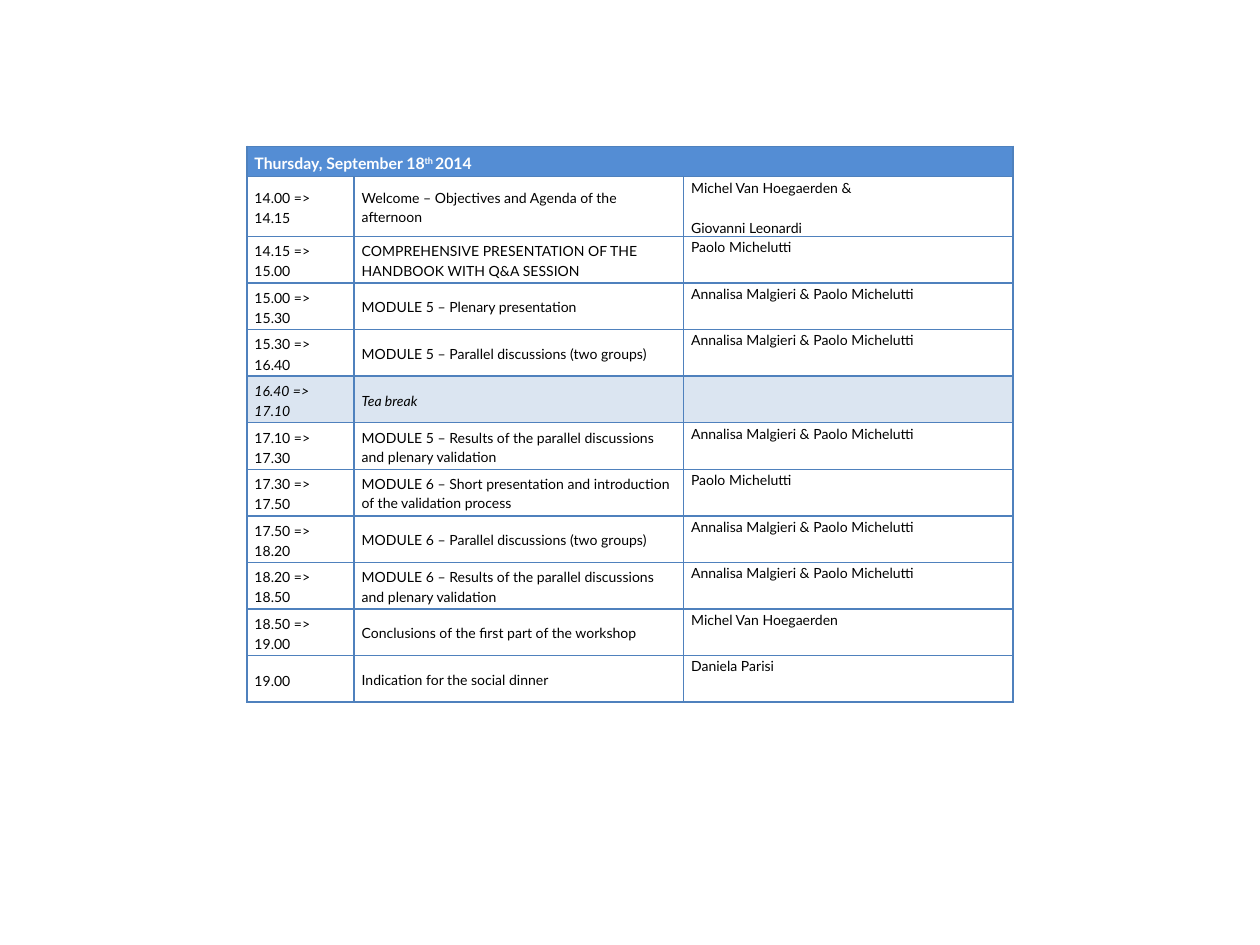
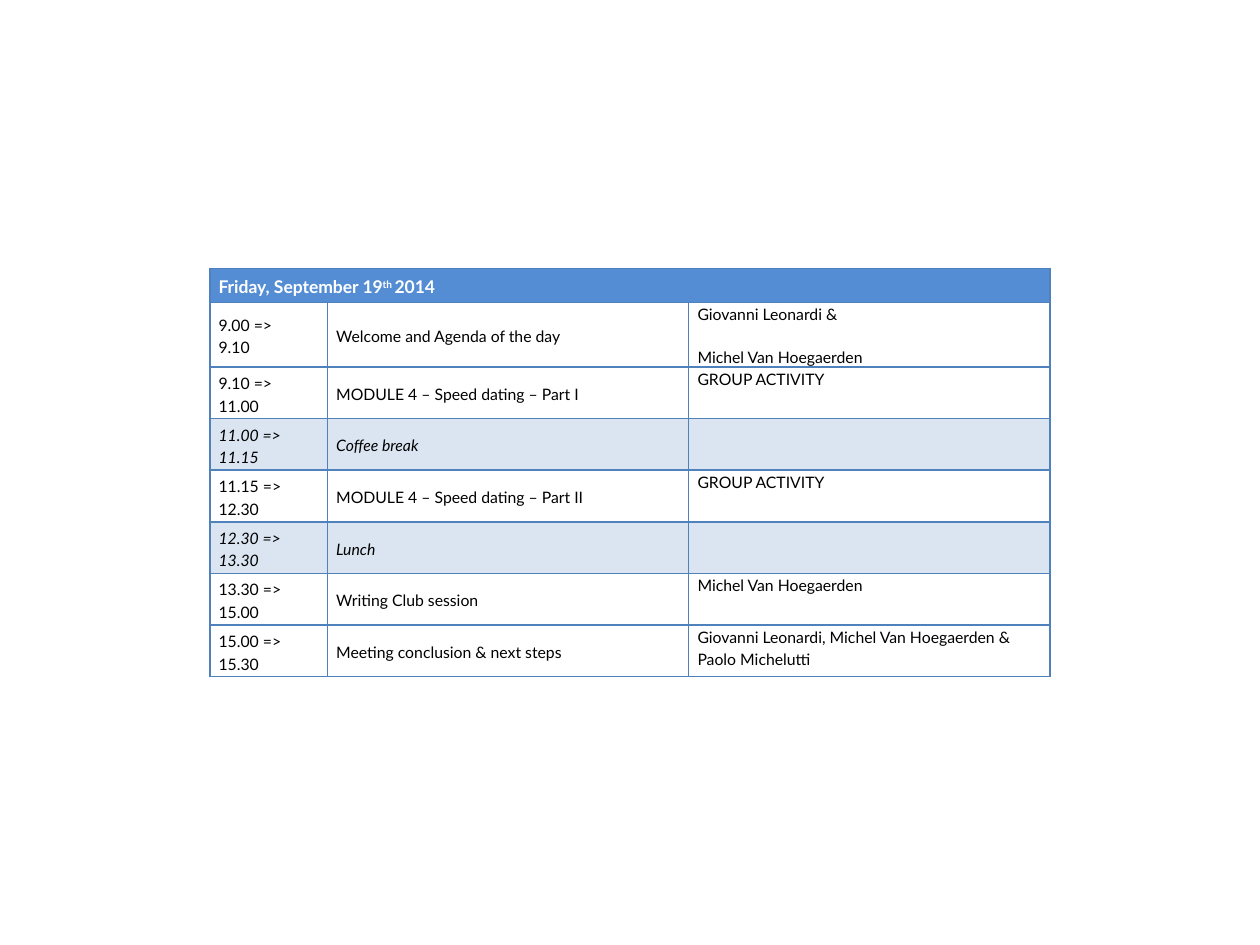
"""Build a two-day workshop agenda, one table per slide."""
from lxml import etree
from pptx import Presentation, util as u
from pptx.dml.color import RGBColor
from pptx.enum import text
from pptx.oxml.ns import qn

WIDE, HIGH = u.Inches(10), u.Inches(7.5)
FONT = "Lato"
COLS = (0.11, 0.03, 0.43, 0.43)
INK = {"head": "548DD4", "rest": "DBE5F1", "line": "4F81BD",
       "dark": "000000", "light": "FFFFFF"}
PAIR = "Annalisa Malgieri & Paolo Michelutti"
MICHEL, PAOLO = "Michel Van Hoegaerden", "Paolo Michelutti"

THURSDAY = [
    ("14.00 => 14.15", "Welcome – Objectives and Agenda of the afternoon",
     [MICHEL + " &", "Giovanni Leonardi"]),
    ("14.15 => 15.00", "COMPREHENSIVE PRESENTATION OF THE HANDBOOK WITH Q&A SESSION", [PAOLO]),
    ("15.00 => 15.30", "MODULE 5 – Plenary presentation", [PAIR]),
    ("15.30 => 16.40", "MODULE 5 – Parallel discussions (two groups)", [PAIR]),
    ("16.40 => 17.10", "Tea break", []),
    ("17.10 => 17.30", "MODULE 5 – Results of the parallel discussions and plenary validation",
     [PAIR]),
    ("17.30 => 17.50", "MODULE 6 – Short presentation and introduction of the validation process",
     [PAOLO]),
    ("17.50 => 18.20", "MODULE 6 – Parallel discussions (two groups)", [PAIR]),
    ("18.20 => 18.50", "MODULE 6 – Results of the parallel discussions and plenary validation",
     [PAIR]),
    ("18.50 => 19.00", "Conclusions of the first part of the workshop", [MICHEL]),
    ("19.00", "Indication for the social dinner", ["Daniela Parisi"]),
]
FRIDAY = [
    ("9.00 => 9.10", "Welcome and Agenda of the day", ["Giovanni Leonardi &", MICHEL]),
    ("9.10 => 11.00", "MODULE 4 – Speed dating – Part I", ["GROUP ACTIVITY"]),
    ("11.00 => 11.15", "Coffee break", []),
    ("11.15 => 12.30", "MODULE 4 – Speed dating – Part II", ["GROUP ACTIVITY"]),
    ("12.30 => 13.30", "Lunch", []),
    ("13.30 => 15.00", "Writing Club session", [MICHEL]),
    ("15.00 => 15.30", "Meeting conclusion & next steps",
     ["Giovanni Leonardi, Michel Van Hoegaerden & Paolo Michelutti"]),
]


def add_run(para, words, size, color="dark", bold=False, italic=False, lift=0):
    """Add one styled run, raised by lift percent."""
    run = para.add_run()
    run.text = words
    font = run.font
    font.name, font.size, font.bold, font.italic = FONT, u.Pt(size), bold, italic
    font.color.rgb = RGBColor.from_string(INK[color])
    if lift:
        run._r.get_or_add_rPr().set("baseline", str(lift * 1000))


def space(para, lines, first=True):
    """Set line pitch and the gaps around a paragraph."""
    para.line_spacing = lines
    para.space_before = u.Pt(0 if first else 6)
    para.space_after = u.Pt(6)


def fill_text(cell, lines, size, pitch=1.15, italic=False):
    """Write each line as a paragraph of the cell."""
    frame = cell.text_frame
    for n, line in enumerate(lines):
        para = frame.add_paragraph() if n else frame.paragraphs[0]
        space(para, pitch, first=n == 0)
        add_run(para, line, size, italic=italic)


def style(cell, inset, fill, shut):
    """Set margins, fill and borders; sides in shut get no line."""
    cell.margin_left = cell.margin_right = u.Inches(inset)
    cell.margin_top = cell.margin_bottom = 0
    props = cell._tc.get_or_add_tcPr()
    for side in "LRTB":
        line = etree.SubElement(props, qn("a:ln" + side), w=str(u.Pt(1)))
        if side in shut:
            etree.SubElement(line, qn("a:noFill"))
        else:
            solid = etree.SubElement(line, qn("a:solidFill"))
            etree.SubElement(solid, qn("a:srgbClr"), val=INK["line"])
    if fill:
        cell.fill.solid()
        cell.fill.fore_color.rgb = RGBColor.from_string(INK[fill])
    else:
        cell.fill.background()


def shrink(cell, size):
    """Keep an empty cell from stretching its row."""
    para = cell.text_frame.paragraphs[0]._p
    etree.SubElement(para, qn("a:endParaRPr"), sz=str(size * 100))


def add_head(grid, day, size, inset):
    """Write the date across the coloured top row."""
    last = len(COLS) - 1
    for c in range(len(COLS)):
        shut = ("L" if c else "") + ("R" if c < last else "")
        style(grid.cell(0, c), inset, "head", shut)
        if c:
            shrink(grid.cell(0, c), size)
    cell = grid.cell(0, 0)
    cell.merge(grid.cell(0, last - 1))
    cell.vertical_anchor = text.MSO_ANCHOR.MIDDLE
    para = cell.text_frame.paragraphs[0]
    para.alignment = text.PP_ALIGN.JUSTIFY
    space(para, 1.15)
    for words, lift in ((day, 0), ("th ", 30), ("2014", 0)):
        add_run(para, words, size, "light", bold=True, lift=lift)


def add_row(grid, r, entry, size, inset):
    """Write one session; one without speakers is a shaded break."""
    time, topic, who = entry
    rest = not who
    for c, shut in enumerate(("R", "L", "", "")):
        style(grid.cell(r, c), inset, "rest" if rest else None, shut)
    for c, words, pitch in ((0, time, 1.2), (2, topic, 1.15)):
        cell = grid.cell(r, c)
        cell.vertical_anchor = text.MSO_ANCHOR.MIDDLE
        fill_text(cell, [words], size, pitch, rest)
    fill_text(grid.cell(r, 3), who, size)
    for c in (1, 3) if rest else (1,):
        shrink(grid.cell(r, c), size)


def add_day(deck, day, plan, width, top, rows, size, inset):
    """Add a slide with a centred agenda; rows holds head, first and other heights."""
    slide = deck.slides.add_slide(deck.slide_layouts[6])
    head, first, other = rows
    highs = [head, first] + [other] * (len(plan) - 1)
    wide = int(WIDE * width)
    grid = slide.shapes.add_table(
        len(highs), len(COLS), (WIDE - wide) // 2, int(HIGH * top),
        wide, u.Inches(sum(highs))).table
    grid.first_row = grid.horz_banding = False
    for col, share in zip(grid.columns, COLS):
        col.width = int(wide * share)
    for row, high in zip(grid.rows, highs):
        row.height = u.Inches(high)
    add_head(grid, day, size + 1, inset)
    for r, entry in enumerate(plan, 1):
        add_row(grid, r, entry, size, inset)


def main():
    """Build both days and save."""
    deck = Presentation()
    deck.slide_width, deck.slide_height = WIDE, HIGH
    add_day(deck, "Thursday, September 18", THURSDAY, 0.608, 0.155,
            (0.24, 0.46, 0.37), 8, 0.06)
    add_day(deck, "Friday, September 19", FRIDAY, 0.667, 0.284,
            (0.27, 0.5, 0.41), 9, 0.07)
    deck.save("out.pptx")


if __name__ == "__main__":
    main()
